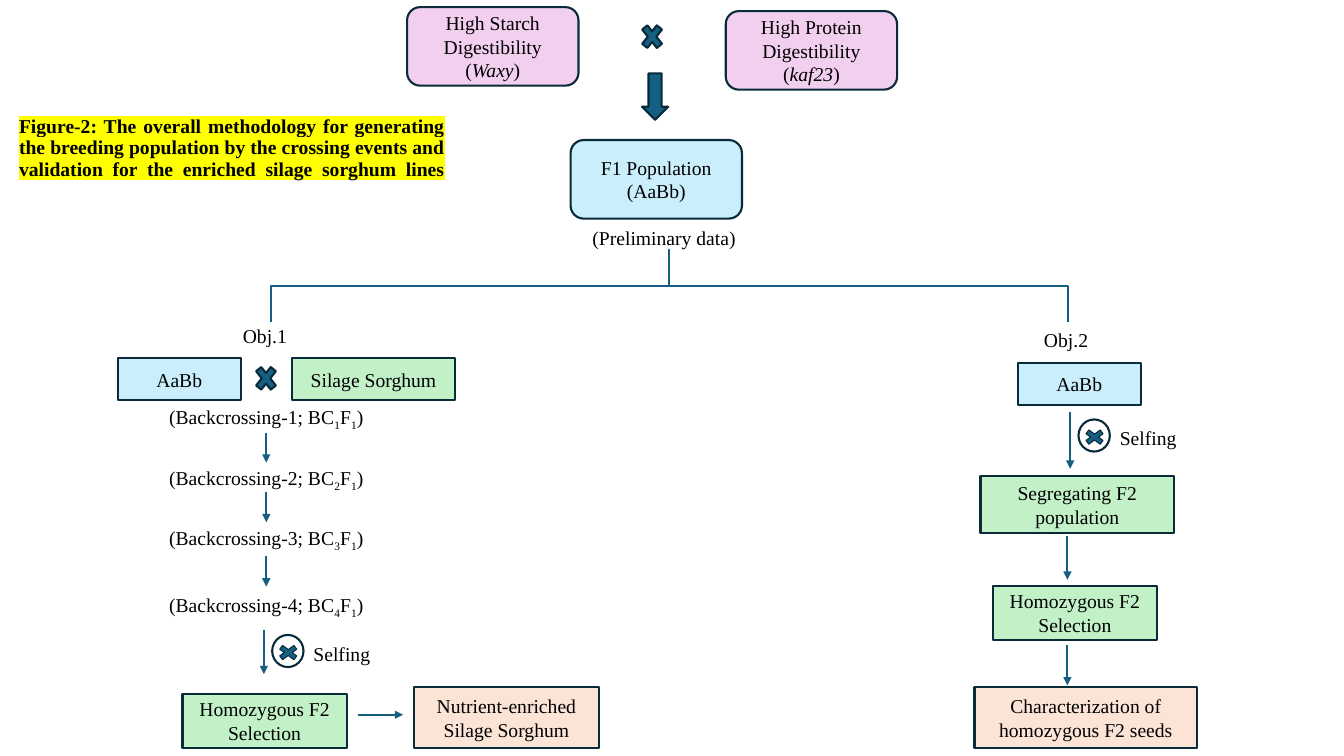
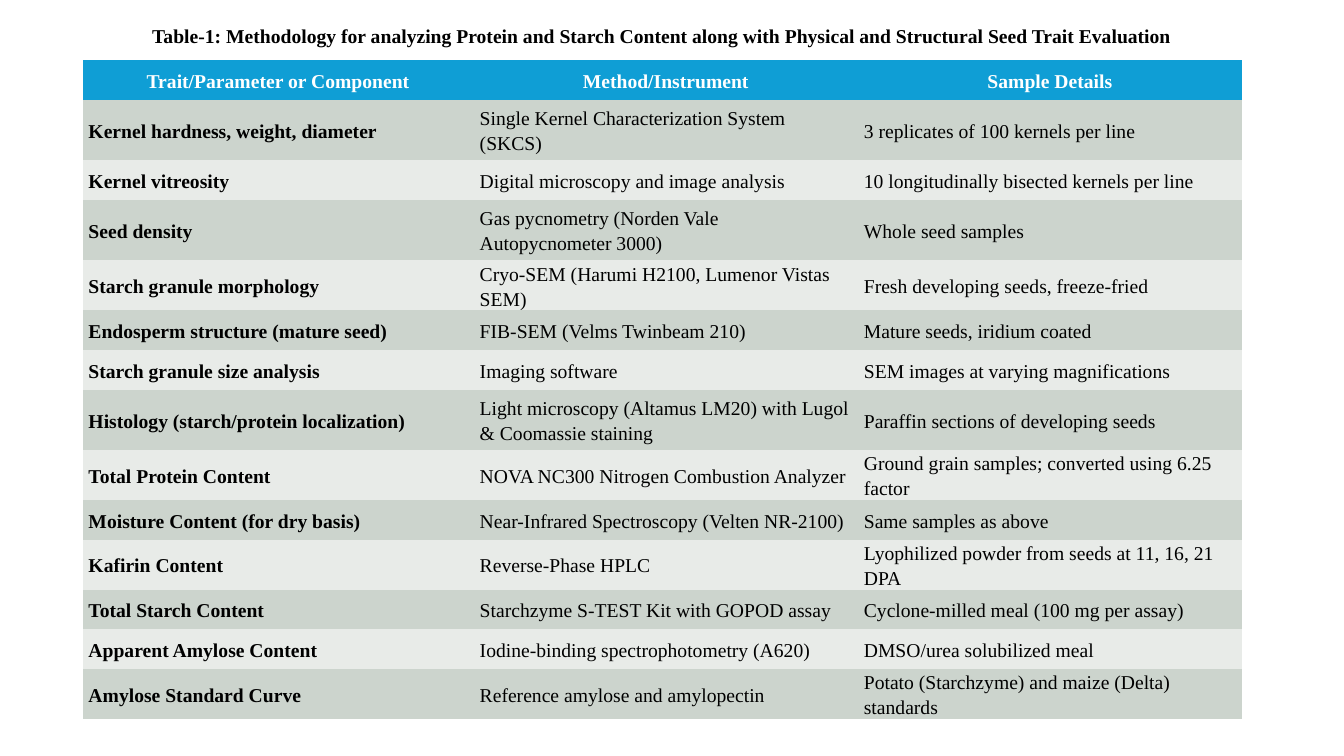
from lxml import etree
from pptx import Presentation
from pptx.dml.color import RGBColor
from pptx.enum.shapes import MSO_CONNECTOR, MSO_SHAPE
from pptx.enum.text import MSO_ANCHOR, PP_ALIGN
from pptx.oxml.ns import qn
from pptx.util import Cm, Pt

LEFT, CENTER, JUSTIFY = PP_ALIGN.LEFT, PP_ALIGN.CENTER, PP_ALIGN.JUSTIFY
TOP, MIDDLE = MSO_ANCHOR.TOP, MSO_ANCHOR.MIDDLE
RECTANGLE, ROUNDED = MSO_SHAPE.RECTANGLE, MSO_SHAPE.ROUNDED_RECTANGLE
CROSS, OVAL = MSO_SHAPE.MATH_MULTIPLY, MSO_SHAPE.OVAL
DOWN_ARROW, BRACE = MSO_SHAPE.DOWN_ARROW, MSO_SHAPE.RIGHT_BRACE
STRAIGHT = MSO_CONNECTOR.STRAIGHT

FONT, FONT_SIZE = "Times New Roman", 14
BLACK, WHITE, YELLOW = "000000", "FFFFFF", "FFFF00"
OUTLINE, TEAL = "092A39", "156082"
PINK, BLUE, GREEN, PEACH = "F2CFEE", "CAEEFB", "C2F1C8", "FBE3D6"
HEADER_FILL, BAND_FILLS = "0F9ED5", ("CCD4CD", "E8EBE8")
NO_TABLE_STYLE = "{2D5ABB26-0587-4C30-8999-92F81FD0307C}"

# All positions and sizes are in centimetres: left, top, width, height.
FIGURE_TITLE = ("Figure-2: The overall methodology for generating the breeding population "
                "by the crossing events and validation for the enriched silage sorghum lines")
BOXES = [
    (ROUNDED, PINK, (10.26, 0.18, 4.32, 1.98),
     [("High Starch Digestibility (", ""), ("Waxy", "italic"), (")", "")]),
    (ROUNDED, PINK, (18.29, 0.28, 4.32, 1.98),
     [("High Protein Digestibility (", ""), ("kaf23", "italic"), (")", "")]),
    (ROUNDED, BLUE, (14.38, 3.53, 4.32, 1.98), "F1 Population (AaBb)"),
    (RECTANGLE, BLUE, (2.97, 9.02, 3.1, 1.07), "AaBb"),
    (RECTANGLE, GREEN, (7.37, 9.02, 4.09, 1.07), "Silage Sorghum"),
    (RECTANGLE, GREEN, (4.6, 17.48, 4.14, 1.37), "Homozygous F2 Selection"),
    (RECTANGLE, PEACH, (10.44, 17.32, 4.65, 1.52), "Nutrient-enriched Silage Sorghum"),
    (RECTANGLE, BLUE, (25.65, 9.14, 3.1, 1.07), "AaBb"),
    (RECTANGLE, GREEN, (24.71, 11.99, 4.88, 1.45), "Segregating F2 population"),
    (RECTANGLE, GREEN, (25.02, 14.76, 4.14, 1.37), "Homozygous F2 Selection"),
    (RECTANGLE, PEACH, (24.56, 17.32, 5.61, 1.52), "Characterization of homozygous F2 seeds"),
]
SYMBOLS = [
    (CROSS, (16.08, 0.48, 0.71, 0.89)),
    (DOWN_ARROW, (16.18, 1.85, 0.66, 1.17)),
    (CROSS, (6.35, 9.09, 0.71, 0.89)),
]
LABELS = [
    ("(Preliminary data)", (14.68, 5.56, 4.32, 0.86)),
    ("Obj.1", (5.87, 8.05, 2.31, 0.86)),
    ("Obj.2", (26.06, 8.13, 2.31, 0.86)),
]
BACKCROSS_AXIS, BACKCROSS_WIDTH = 6.71, 6.6
BACKCROSS_TOPS = [10.08, 11.61, 13.13, 14.81]
ARROWS = [
    (6.71, 10.9, 6.71, 11.66),
    (6.71, 12.4, 6.71, 13.16),
    (6.71, 14.02, 6.71, 14.78),
    (6.65, 15.88, 6.65, 16.99),
    (9.02, 18.01, 10.16, 18.01),
    (26.97, 10.39, 26.97, 11.81),
    (26.9, 13.51, 26.9, 14.61),
    (26.9, 16.26, 26.9, 17.27),
]
SELFING_MARKS = [(6.86, 16), (27.18, 10.57)]
BRACE_FRAME = (15.95, -2.84, 1.83, 20.09)

TABLE_TITLE = ("Table-1: Methodology for analyzing Protein and Starch Content along with "
               "Physical and Structural Seed Trait Evaluation")
TABLE_LEFT, TABLE_TOP = 2.08, 1.52
COLUMN_WIDTHS = [9.86, 9.68, 9.68]
SINGLE, DOUBLE, TALL = 1, 1.26, 1.52
TABLE_ROWS = [
    (SINGLE, "Trait/Parameter or Component", "Method/Instrument", "Sample Details"),
    (TALL, "Kernel hardness, weight, diameter",
     "Single Kernel Characterization System (SKCS)", "3 replicates of 100 kernels per line"),
    (SINGLE, "Kernel vitreosity", "Digital microscopy and image analysis",
     "10 longitudinally bisected kernels per line"),
    (TALL, "Seed density", "Gas pycnometry (Norden Vale Autopycnometer 3000)",
     "Whole seed samples"),
    (DOUBLE, "Starch granule morphology", "Cryo-SEM (Harumi H2100, Lumenor Vistas SEM)",
     "Fresh developing seeds, freeze-fried"),
    (SINGLE, "Endosperm structure (mature seed)", "FIB-SEM (Velms Twinbeam 210)",
     "Mature seeds, iridium coated"),
    (SINGLE, "Starch granule size analysis", "Imaging software",
     "SEM images at varying magnifications"),
    (TALL, "Histology (starch/protein localization)",
     "Light microscopy (Altamus LM20) with Lugol & Coomassie staining",
     "Paraffin sections of developing seeds"),
    (DOUBLE, "Total Protein Content", "NOVA NC300 Nitrogen Combustion Analyzer",
     "Ground grain samples; converted using 6.25 factor"),
    (SINGLE, "Moisture Content (for dry basis)", "Near-Infrared Spectroscopy (Velten NR-2100)",
     "Same samples as above"),
    (DOUBLE, "Kafirin Content", "Reverse-Phase HPLC",
     "Lyophilized powder from seeds at 11, 16, 21 DPA"),
    (SINGLE, "Total Starch Content", "Starchzyme S-TEST Kit with GOPOD assay",
     "Cyclone-milled meal (100 mg per assay)"),
    (SINGLE, "Apparent Amylose Content", "Iodine-binding spectrophotometry (A620)",
     "DMSO/urea solubilized meal"),
    (DOUBLE, "Amylose Standard Curve", "Reference amylose and amylopectin",
     "Potato (Starchzyme) and maize (Delta) standards"),
]


def color(value):
    return RGBColor.from_string(value)


def lengths(values):
    return [Cm(value) for value in values]


def write(text_frame, content, align=LEFT, anchor=TOP, bold=False, ink=BLACK, spacing=None):
    """Fill the frame with a string or a list of (text, style) runs."""
    text_frame.word_wrap = True
    text_frame.vertical_anchor = anchor
    paragraph = text_frame.paragraphs[0]
    paragraph.alignment = align
    paragraph.line_spacing = spacing
    font = paragraph.font
    font.name, font.size, font.bold = FONT, Pt(FONT_SIZE), bold
    font.color.rgb = color(ink)
    for text, style in [(content, "")] if isinstance(content, str) else content:
        run = paragraph.add_run()
        run.text = text
        if style == "italic":
            run.font.italic = True
        elif style == "subscript":
            run.font._element.set("baseline", "-25000")
    return paragraph


def add_text(slide, frame, content, **style):
    return write(slide.shapes.add_textbox(*lengths(frame)).text_frame, content, **style)


def add_title(slide, frame, text, align):
    return add_text(slide, frame, text, align=align, anchor=MIDDLE, bold=True, spacing=0.9)


def add_shape(slide, kind, frame, fill=None, line=OUTLINE, line_width=1.5):
    shape = slide.shapes.add_shape(kind, *lengths(frame))
    shape.shadow.inherit = False
    if fill:
        shape.fill.solid()
        shape.fill.fore_color.rgb = color(fill)
    else:
        shape.fill.background()
    shape.line.color.rgb = color(line)
    shape.line.width = Pt(line_width)
    return shape


def add_arrow(slide, ends):
    arrow = slide.shapes.add_connector(STRAIGHT, *lengths(ends))
    arrow.line.color.rgb = color(TEAL)
    arrow.line.width = Pt(1.5)
    etree.SubElement(arrow.line._get_or_add_ln(), qn("a:tailEnd"), type="triangle")
    etree.SubElement(arrow._element.spPr, qn("a:effectLst"))


def add_selfing_mark(slide, left, top):
    add_shape(slide, CROSS, (left + 0.06, top + 0.19, 0.69, 0.51), TEAL, line_width=0.75)
    add_shape(slide, OVAL, (left, top, 0.79, 0.81))
    add_text(slide, (left + 0.79, top + 0.04, 3.25, 0.86), "Selfing")


def highlight(run, value):
    element = etree.SubElement(run.font._element, qn("a:highlight"))
    etree.SubElement(element, qn("a:srgbClr"), val=value)


def build_breeding_slide(slide):
    title = add_title(slide, (0.23, 2.82, 11.23, 2.44), FIGURE_TITLE, JUSTIFY)
    highlight(title.runs[0], YELLOW)
    title.add_line_break()  # justifies the last line as well

    for kind, fill, frame, content in BOXES:
        box = add_shape(slide, kind, frame, fill)
        write(box.text_frame, content, align=CENTER, anchor=MIDDLE)
    for kind, frame in SYMBOLS:
        add_shape(slide, kind, frame, TEAL)
    for text, frame in LABELS:
        add_text(slide, frame, text)
    for number, top in enumerate(BACKCROSS_TOPS, 1):
        runs = [(f"(Backcrossing-{number}; BC", ""), (str(number), "subscript"),
                ("F", ""), ("1", "subscript"), (")", "")]
        left = BACKCROSS_AXIS - BACKCROSS_WIDTH / 2
        add_text(slide, (left, top, BACKCROSS_WIDTH, 0.86), runs, align=CENTER)
    for ends in ARROWS:
        add_arrow(slide, ends)
    for left, top in SELFING_MARKS:
        add_selfing_mark(slide, left, top)

    brace = add_shape(slide, BRACE, BRACE_FRAME, line=TEAL)
    brace.adjustments[0], brace.adjustments[1] = 0, 0.5
    brace.rotation = 270


def build_methods_slide(slide):
    width = sum(COLUMN_WIDTHS)
    height = sum(row[0] for row in TABLE_ROWS)
    frame = lengths((TABLE_LEFT, TABLE_TOP, width, height))
    table = slide.shapes.add_table(len(TABLE_ROWS), len(COLUMN_WIDTHS), *frame).table
    table.horz_banding = False
    table._tbl.tblPr.find(qn("a:tableStyleId")).text = NO_TABLE_STYLE
    for column, column_width in zip(table.columns, COLUMN_WIDTHS):
        column.width = Cm(column_width)
    for row_index, (row_height, *texts) in enumerate(TABLE_ROWS):
        table.rows[row_index].height = Cm(row_height)
        header = row_index == 0
        fill = HEADER_FILL if header else BAND_FILLS[(row_index - 1) % 2]
        for column_index, text in enumerate(texts):
            cell = table.cell(row_index, column_index)
            cell.fill.solid()
            cell.fill.fore_color.rgb = color(fill)
            cell.margin_left = cell.margin_right = Cm(0.15)
            cell.margin_top = cell.margin_bottom = 0
            cell.vertical_anchor = MIDDLE
            write(cell.text_frame, text, align=CENTER if header else LEFT, anchor=None,
                  bold=header or column_index == 0, ink=WHITE if header else BLACK,
                  spacing=1.15)
    add_title(slide, (TABLE_LEFT, 0.38, width, 1.12), TABLE_TITLE, CENTER)


def main():
    presentation = Presentation()
    presentation.slide_width, presentation.slide_height = Cm(33.87), Cm(19.05)
    blank = presentation.slide_layouts[6]
    for build in (build_breeding_slide, build_methods_slide):
        build(presentation.slides.add_slide(blank))
    presentation.save("out.pptx")


if __name__ == "__main__":
    main()
